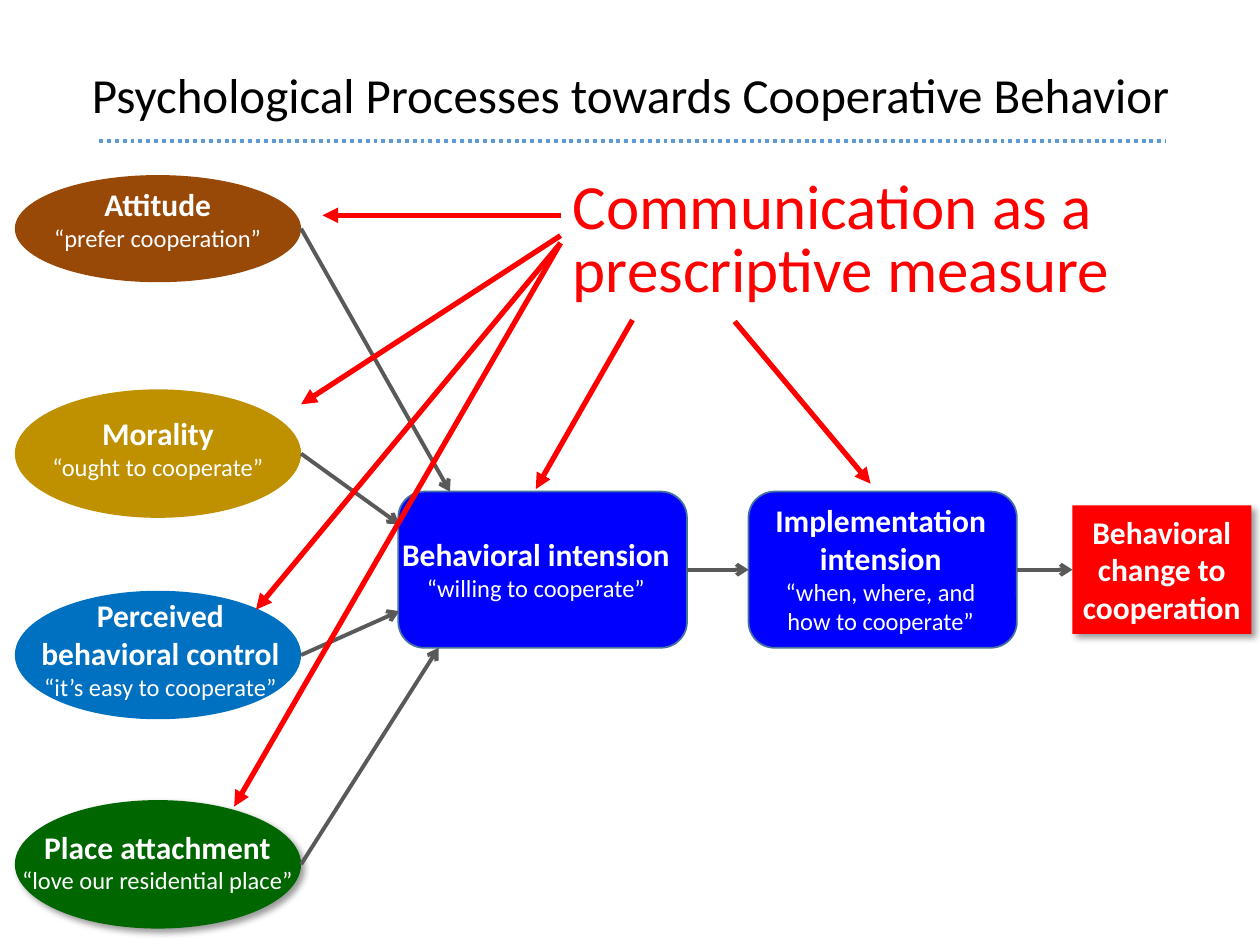
from lxml.etree import SubElement
from pptx import Presentation
from pptx.dml.color import RGBColor
from pptx.enum.dml import MSO_LINE
from pptx.enum.shapes import MSO_CONNECTOR, MSO_SHAPE
from pptx.enum.text import MSO_ANCHOR, PP_ALIGN
from pptx.oxml.ns import qn
from pptx.util import Cm, Pt

COLORS = {
    "brown": "984807", "gold": "BF9000", "sky": "0070C0", "green": "006600",
    "blue": "0000FF", "edge": "43739E", "red": "FF0000", "gray": "595959",
    "rule": "5B9BD5", "white": "FFFFFF", "black": "000000",
}
FONT = "Calibri"
TITLE = "Psychological Processes towards Cooperative Behavior"
MEASURE = "Communication as a prescriptive measure"

OVAL_LEFT, OVAL_WIDTH = 0.3, 5.77
FACTORS = [
    dict(top=3.53, height=2.16, fill="brown", head="Attitude",
         quote="“prefer cooperation”", label=(0.79, 3.61, 4.78, 1.63),
         wrap=False, target=(9.07, 9.91)),
    dict(top=7.85, height=2.59, fill="gold", head="Morality",
         quote="“ought to cooperate”", label=(0.76, 8.23, 4.85, 1.63),
         wrap=False, target=(8.05, 10.57)),
    dict(top=11.91, height=2.59, fill="sky", head="Perceived behavioral control",
         quote="“it’s easy to cooperate”", label=(0.25, 11.89, 5.97, 2.39),
         wrap=True, target=(8.05, 12.32)),
    dict(top=16.13, height=2.59, fill="green", head="Place attachment",
         quote="“love our residential place”", label=(0.15, 16.56, 6.05, 1.63),
         wrap=False, target=(8.84, 13.06), shadow=True),
]
STAGES = [
    dict(box=(8.03, 9.91, 5.82, 3.15), fill="blue", edge="edge",
         shape=MSO_SHAPE.ROUNDED_RECTANGLE, head="Behavioral intension",
         quote="“willing to cooperate”", label=(7.82, 10.67, 5.97, 1.63), wrap=False),
    dict(box=(15.09, 9.91, 5.41, 3.15), fill="blue", edge="edge",
         shape=MSO_SHAPE.ROUNDED_RECTANGLE, head="Implementation intension",
         quote="“when, where, and how to cooperate”",
         label=(15.34, 9.98, 4.83, 3), wrap=True),
    dict(box=(21.62, 10.19, 3.61, 2.59), fill="red", shape=MSO_SHAPE.RECTANGLE,
         head="Behavioral change to cooperation",
         label=(20.88, 10.21, 5.08, 2.57), wrap=True, shadow=True),
]
MEASURE_ARROWS = [
    ((11.3, 4.34), (6.5, 4.34)),
    ((11.3, 4.75), (6.07, 8.15)),
    ((11.3, 4.9), (5.16, 12.29)),
    ((11.3, 4.9), (4.72, 16.26)),
    ((12.75, 6.45), (10.8, 9.86)),
    ((14.81, 6.48), (17.55, 9.75)),
]

prs = Presentation()
prs.slide_width, prs.slide_height = Cm(25.4), Cm(19.05)
s = prs.slides.add_slide(prs.slide_layouts[6])


def rgb(name):
    return RGBColor.from_string(COLORS[name])


def add_text(lines, box, color="white", align=PP_ALIGN.CENTER,
             anchor=MSO_ANCHOR.TOP, wrap=True, spacing=None):
    tf = s.shapes.add_textbox(*map(Cm, box)).text_frame
    tf.word_wrap = wrap
    tf.vertical_anchor = anchor
    for i, (text, size, bold) in enumerate(lines):
        p = tf.add_paragraph() if i else tf.paragraphs[0]
        p.alignment = align
        p.line_spacing = spacing
        r = p.add_run()
        r.text = text
        r.font.name, r.font.size, r.font.bold = FONT, Pt(size), bold
        r.font.color.rgb = rgb(color)


def add_label(item):
    lines = [(item["head"], 18, True)]
    if "quote" in item:
        lines.append((item["quote"], 14, False))
    add_text(lines, item["label"], wrap=item["wrap"])


def add_node(shape, box, fill, edge=None, shadow=False):
    sp = s.shapes.add_shape(shape, *map(Cm, box))
    sp.shadow.inherit = False
    sp.fill.solid()
    sp.fill.fore_color.rgb = rgb(fill)
    if edge:
        sp.line.color.rgb = rgb(edge)
        sp.line.width = Pt(1)
    else:
        sp.line.fill.background()
    if shadow:
        effects = sp._element.spPr.find(qn("a:effectLst"))
        outer = SubElement(effects, qn("a:outerShdw"), blurRad=str(Pt(4)),
                           dist=str(Pt(3)), dir="2700000", algn="tl", rotWithShape="0")
        tint = SubElement(outer, qn("a:srgbClr"), val=COLORS["black"])
        SubElement(tint, qn("a:alpha"), val="40000")
    return sp


def add_line(start, end, color, width=2.25, head=None):
    c = s.shapes.add_connector(MSO_CONNECTOR.STRAIGHT, *map(Cm, start + end))
    c.line.color.rgb = rgb(color)
    c.line.width = Pt(width)
    if head:
        SubElement(c.line._get_or_add_ln(), qn("a:tailEnd"), type=head)
    SubElement(c._element.spPr, qn("a:effectLst"))
    return c


add_text([(TITLE, 28, False)], (0.66, 0.13, 24.1, 3.68), color="black",
         anchor=MSO_ANCHOR.MIDDLE, spacing=0.9)
add_line((2, 2.85), (23.5, 2.85), "rule").line.dash_style = MSO_LINE.ROUND_DOT

stage_shapes = [add_node(g["shape"], g["box"], g["fill"], g.get("edge"), g.get("shadow"))
                for g in STAGES]
for f in FACTORS:
    add_node(MSO_SHAPE.OVAL, (OVAL_LEFT, f["top"], OVAL_WIDTH, f["height"]),
             f["fill"], shadow=f.get("shadow"))
for item in FACTORS + STAGES:
    add_label(item)

for f in FACTORS:
    start = (OVAL_LEFT + OVAL_WIDTH, f["top"] + f["height"] / 2)
    add_line(start, f["target"], "gray", head="arrow")
for left, right in zip(stage_shapes, stage_shapes[1:]):
    c = add_line((0, 0), (1, 1), "gray", head="arrow")
    c.begin_connect(left, 3)
    c.end_connect(right, 1)

add_text([(MEASURE, 36, False)], (11.3, 3.48, 11.79, 2.84), color="red",
         align=PP_ALIGN.LEFT, spacing=Pt(36))
for start, end in MEASURE_ARROWS:
    add_line(start, end, "red", 3, "triangle")

prs.save("out.pptx")
